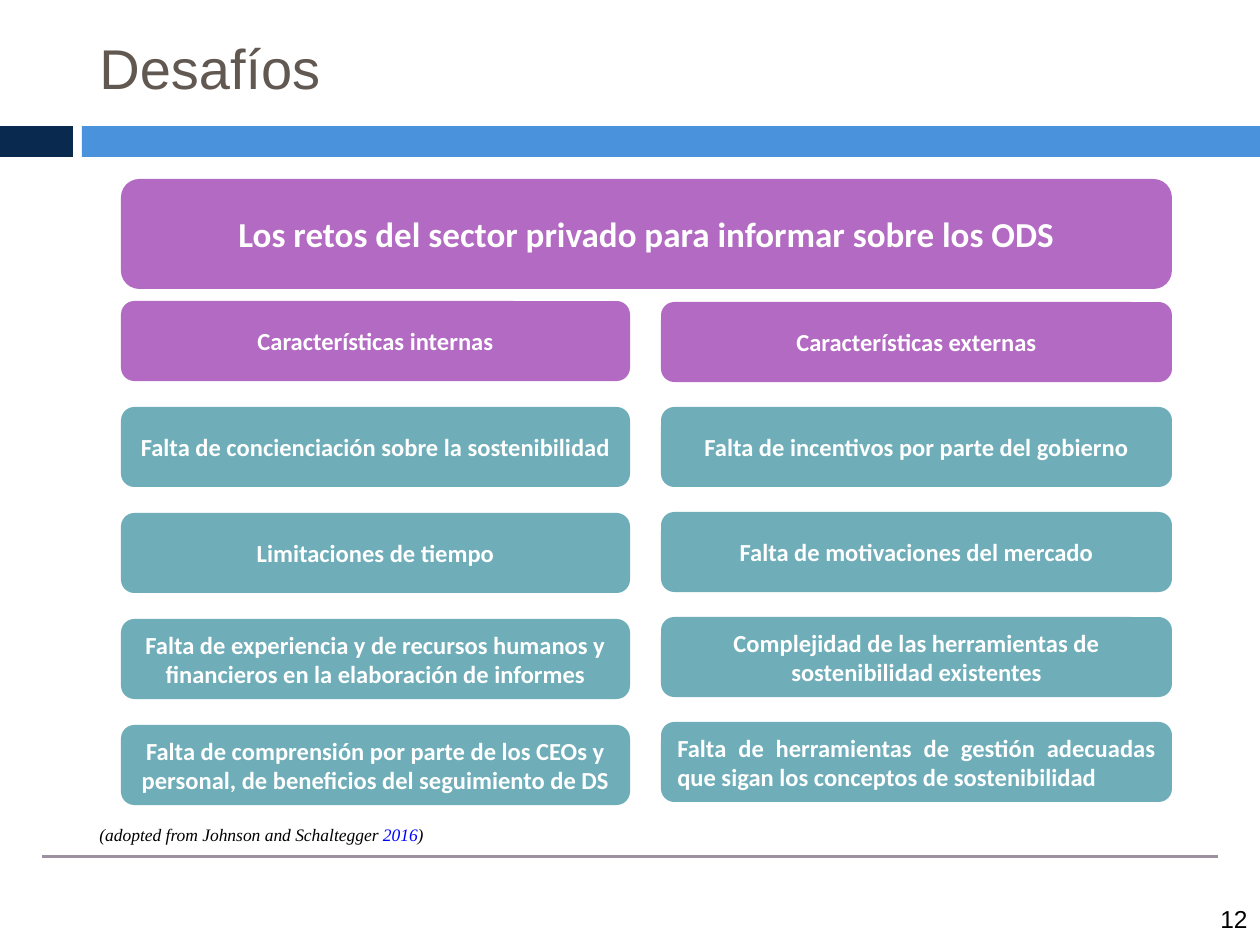
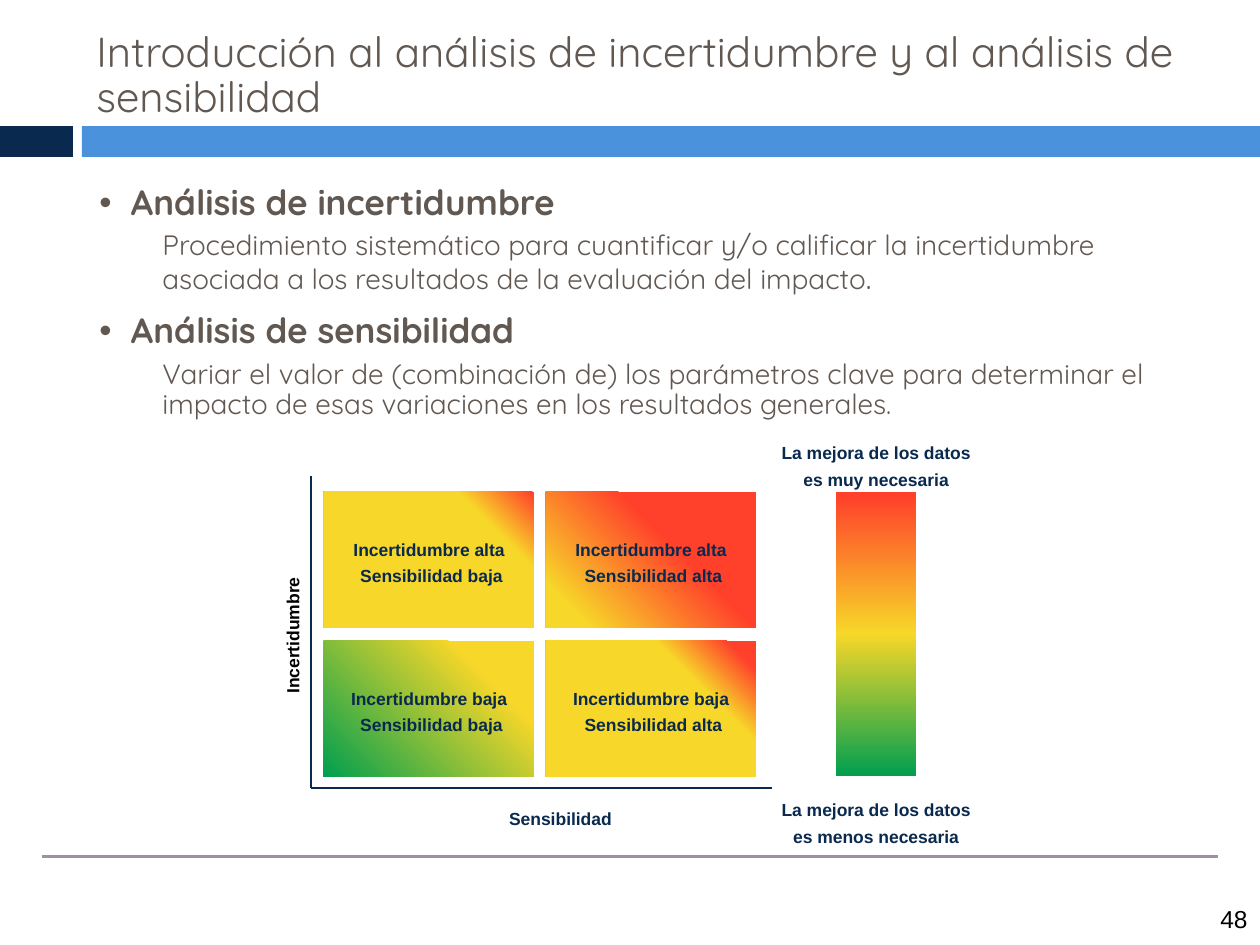
"""Build two slides: reporting challenges, and uncertainty and sensitivity analysis."""
from lxml import etree
from pptx import Presentation
from pptx.dml.color import RGBColor
from pptx.enum.shapes import MSO_CONNECTOR, MSO_SHAPE
from pptx.enum.text import MSO_ANCHOR, PP_ALIGN
from pptx.oxml.ns import qn
from pptx.util import Pt

PX = 7257
RECT, ROUND = MSO_SHAPE.RECTANGLE, MSO_SHAPE.ROUNDED_RECTANGLE
STRAIGHT = MSO_CONNECTOR.STRAIGHT
TOP, MIDDLE = MSO_ANCHOR.TOP, MSO_ANCHOR.MIDDLE
LEFT, CENTER, JUSTIFY = PP_ALIGN.LEFT, PP_ALIGN.CENTER, PP_ALIGN.JUSTIFY
COLORS = {
    "navy": "09294E", "blue": "4A92DB", "rule": "9D90A0", "title": "625852",
    "purple": "B36AC2", "teal": "6FAEB9", "white": "FFFFFF", "black": "000000",
    "link": "0000FF", "red": "FF402B", "yellow": "F7D729", "green": "009F4F",
}


def add_box(s, x, y, w, h, shape=None, fill=None, anchor=TOP):
    """Add a text box, or a preset shape when one is given."""
    box = [v * PX for v in (x, y, w, h)]
    if shape is None:
        sp = s.shapes.add_textbox(*box)
    else:
        sp = s.shapes.add_shape(shape, *box)
        sp.shadow.inherit = False
        sp.line.fill.background()
    if fill:
        sp.fill.solid()
        sp.fill.fore_color.rgb = RGBColor.from_string(COLORS[fill])
    sp.text_frame.word_wrap = True
    sp.text_frame.vertical_anchor = anchor
    return sp


def write(sp, text, p=None, size=10, font="Arial", color="navy", bold=False,
          italic=False, align=LEFT, spacing=None, before=None):
    """Write text as a new paragraph, or as a further run of p."""
    if p is None:
        tf = sp.text_frame
        p = tf.add_paragraph() if tf.text else tf.paragraphs[0]
        p.alignment = align
        p.line_spacing = spacing
        if before:
            p.space_before = Pt(before)
    r = p.add_run()
    r.text = text
    r.font.size, r.font.name = Pt(size), font
    r.font.bold, r.font.italic = bold, italic
    r.font.color.rgb = RGBColor.from_string(COLORS[color])
    return p


prs = Presentation()
prs.slide_width, prs.slide_height = 1260 * PX, 945 * PX
lines = []
slides = []
for number, title, box, size, font in [
    ("12", "Desafíos", (87, 11, 995, 120), 32, "Arial"),
    ("48", "Introducción al análisis de incertidumbre y al análisis de sensibilidad",
     (84, 16, 1155, 120), 24, "Quicksand"),
]:
    s = prs.slides.add_slide(prs.slide_layouts[6])
    slides.append(s)
    add_box(s, 0, 126, 73, 31, RECT, "navy")
    add_box(s, 82, 126, 1178, 31, RECT, "blue")
    sp = add_box(s, 1208, 892, 52, 53, anchor=MIDDLE)
    sp.text_frame.margin_left = sp.text_frame.margin_right = 0
    write(sp, number, size=14, color="black", align=CENTER)
    sp = add_box(s, *box, anchor=MIDDLE)
    write(sp, title, size=size, font=font, color="title", spacing=0.9)
    lines.append((s, 42, 857, 1218, 857, "rule", 1.75))
challenges, analysis = slides

sp = add_box(challenges, 121, 179, 1051, 110, ROUND, "purple", MIDDLE)
write(sp, "Los retos del sector privado para informar sobre los ODS",
      size=20, font="Calibri", color="white", bold=True, align=CENTER)
columns = [
    (121, 301, 509, 106, [
        "Características internas",
        "Falta de concienciación sobre la sostenibilidad",
        "Limitaciones de tiempo",
        "Falta de experiencia y de recursos humanos y financieros en la elaboración de informes",
        "Falta de comprensión por parte de los CEOs y personal, de beneficios del seguimiento de DS",
    ]),
    (661, 302, 511, 105, [
        "Características externas",
        "Falta de incentivos por parte del gobierno",
        "Falta de motivaciones del mercado",
        "Complejidad de las herramientas de sostenibilidad existentes",
        "Falta de herramientas de gestión adecuadas que sigan los conceptos de sostenibilidad",
    ]),
]
for x, y, w, pitch, cards in columns:
    for i, card in enumerate(cards):
        fill = "teal" if i else "purple"
        sp = add_box(challenges, x, y + i * pitch, w, 80, ROUND, fill, MIDDLE)
        align = JUSTIFY if card.startswith("Falta de herramientas") else CENTER
        write(sp, card, size=14, font="Calibri", color="white", bold=True, align=align)

sp = add_box(challenges, 87, 818, 630, 34)
p = None
for text, color in [("(adopted from Johnson and Schaltegger ", "black"),
                    ("2016", "link"), (")", "black")]:
    p = write(sp, text, p, font="Times New Roman", color=color, italic=True)

sp = add_box(analysis, 87, 179, 1121, 310)
for i, (heading, detail, end, end_size) in enumerate([
    ("Análisis de incertidumbre",
     "Procedimiento sistemático para cuantificar y/o calificar la incertidumbre "
     "asociada a los resultados de la evaluación del impacto", ".", 18),
    ("Análisis de sensibilidad",
     "Variar el valor de (combinación de) los parámetros clave para determinar el "
     "impacto de esas variaciones en los resultados generales", ".", 16),
]):
    body = {"font": "Quicksand", "color": "title", "spacing": 0.9}
    p = write(sp, heading, size=20, bold=True, before=10 * i, **body)
    pPr = p._p.get_or_add_pPr()
    pPr.set("marL", str(228600))
    pPr.set("indent", str(-228600))
    etree.SubElement(pPr, qn("a:buFont")).set("typeface", "Arial")
    etree.SubElement(pPr, qn("a:buChar")).set("char", "•")
    p = write(sp, detail, size=16, before=5, **body)
    p._p.get_or_add_pPr().set("marL", str(457200))
    write(sp, end, p, size=end_size, **body)

label = {"bold": True, "align": CENTER, "spacing": 1.25}
swatches = [
    (324, 492, 210, 136, 135, [(0, "red"), (22, "yellow")], ("alta", "baja")),
    (546, 492, 210, 136, 135, [(39, "red"), (87, "yellow")], ("alta", "alta")),
    (324, 641, 210, 136, 135, [(24, "yellow"), (100, "green")], ("baja", "baja")),
    (546, 641, 210, 136, 135, [(8, "red"), (29, "yellow")], ("baja", "alta")),
    (836, 492, 80, 284, 90, [(1, "red"), (50, "yellow"), (100, "green")], None),
]
for x, y, w, h, angle, stops, levels in swatches:
    sp = add_box(analysis, x, y, w, h, RECT, anchor=MIDDLE)
    grad = etree.Element(qn("a:gradFill"), rotWithShape="1")
    gs_list = etree.SubElement(grad, qn("a:gsLst"))
    for pos, color in stops:
        gs = etree.SubElement(gs_list, qn("a:gs"), pos=str(pos * 1000))
        etree.SubElement(gs, qn("a:srgbClr"), val=COLORS[color])
    etree.SubElement(grad, qn("a:lin"), ang=str(angle * 60000), scaled="0")
    sp._element.spPr.find(qn("a:prstGeom")).addnext(grad)
    if levels:
        write(sp, f"Incertidumbre {levels[0]}", **label)
        write(sp, f" Sensibilidad {levels[1]}", **label)

for text, box, anchor, color, rotation in [
    ("Incertidumbre", (161, 616, 258, 39), TOP, "black", 270),
    ("Sensibilidad", (491, 791, 139, 50), MIDDLE, "navy", 0),
    ("La mejora de los datos es muy necesaria", (765, 431, 222, 66), TOP, "navy", 0),
    ("La mejora de los datos es menos necesaria", (765, 788, 222, 66), TOP, "navy", 0),
]:
    sp = add_box(analysis, *box, anchor=anchor)
    sp.rotation = rotation
    write(sp, text, color=color, **label)

lines += [(analysis, 311, 476, 311, 788, "navy", 0.75),
          (analysis, 772, 788, 311, 788, "navy", 0.75)]
for s, x1, y1, x2, y2, color, width in lines:
    ln = s.shapes.add_connector(STRAIGHT, *[v * PX for v in (x1, y1, x2, y2)])
    ln.line.color.rgb = RGBColor.from_string(COLORS[color])
    ln.line.width = Pt(width)
    etree.SubElement(ln._element.spPr, qn("a:effectLst"))

prs.save("out.pptx")
